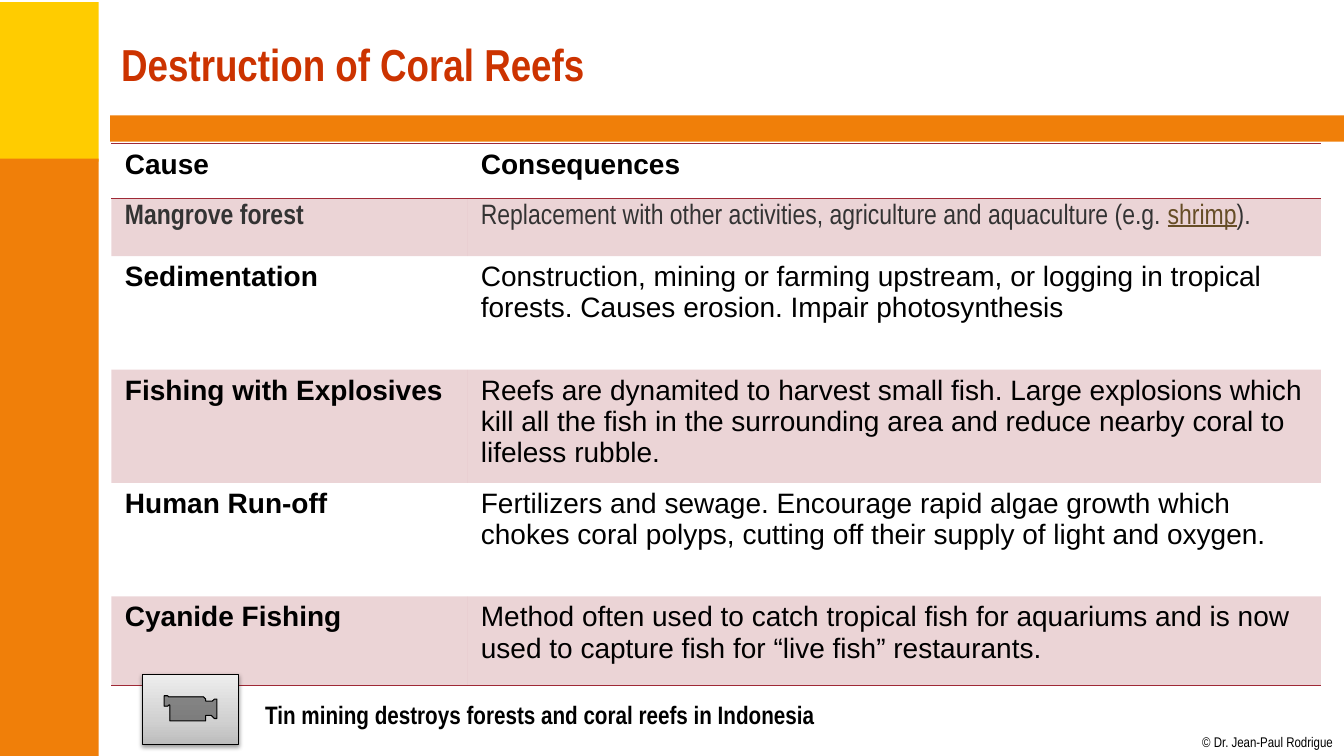
from copy import deepcopy
from dataclasses import dataclass

from lxml import etree
from pptx import Presentation
from pptx import util as u
from pptx.dml.color import RGBColor
from pptx.enum import shapes, text
from pptx.oxml import ns

PX = 9525
COLORS = {
    "yellow": "FFCC00", "orange": "F07F09", "title": "CC3300", "wine": "9F2936",
    "black": "000000", "gray": "333333", "brown": "664D26",
    "button_dark": "BDBDBD", "button_mid": "D1D1D1", "button_light": "EEEEEE",
}
COLUMNS = [339, 813]
ROW_HEIGHTS = [52, 55, 108, 108, 108, 85]
NO_GRID_STYLE = "{2D5ABB26-0587-4C30-8999-92F81FD0307C}"


@dataclass(frozen=True)
class Frame:
    left: int
    top: int
    width: int
    height: int

    def emu(self) -> list[u.Emu]:
        return [u.Emu(n * PX) for n in (self.left, self.top, self.width, self.height)]


@dataclass(frozen=True)
class Span:
    words: str
    size: int = 20
    font: str = "Arial"
    color: str = "black"
    bold: bool = False
    underline: bool = False


@dataclass(frozen=True)
class Bar:
    frame: Frame
    color: str


@dataclass(frozen=True)
class Label:
    frame: Frame
    span: Span
    wrap: bool = True
    padded: bool = True
    anchor: text.MSO_ANCHOR = text.MSO_ANCHOR.TOP


@dataclass(frozen=True)
class Row:
    cause: Span
    consequences: list[Span]


def plain_row(cause: str, consequences: str, bold: bool = False) -> Row:
    return Row(Span(cause, bold=True), [Span(consequences, bold=bold)])


NARROW = "Arial Narrow"
BARS = [
    Bar(Frame(-2, 2, 96, 152), "yellow"),
    Bar(Frame(-2, 151, 96, 569), "orange"),
    Bar(Frame(105, 110, 1175, 25), "orange"),
]
LABELS = [
    Label(Frame(1145, 699, 126, 16), Span("© Dr. Jean-Paul Rodrigue", 10, NARROW),
          wrap=False, padded=False),
    Label(Frame(106, 11, 1152, 100),
          Span("Destruction of Coral Reefs", 32, NARROW, "title", True),
          anchor=text.MSO_ANCHOR.MIDDLE),
    Label(Frame(243, 661, 640, 38),
          Span("Tin mining destroys forests and coral reefs in Indonesia", 18, NARROW, bold=True)),
]
ROWS = [
    plain_row("Cause", "Consequences", bold=True),
    Row(Span("Mangrove forest", font=NARROW, color="gray", bold=True), [
        Span("Replacement with other activities, agriculture and aquaculture (e.g. ",
             font=NARROW, color="gray"),
        Span("shrimp", font=NARROW, color="brown", underline=True),
        Span(").", font=NARROW, color="gray"),
    ]),
    plain_row("Sedimentation",
              "Construction, mining or farming upstream, or logging in tropical forests. "
              "Causes erosion. Impair photosynthesis"),
    plain_row("Fishing with Explosives",
              "Reefs are dynamited to harvest small fish. Large explosions which kill all the "
              "fish in the surrounding area and reduce nearby coral to lifeless rubble."),
    plain_row("Human Run-off",
              "Fertilizers and sewage. Encourage rapid algae growth which chokes coral polyps, "
              "cutting off their supply of light and oxygen."),
    plain_row("Cyanide Fishing",
              "Method often used to catch tropical fish for aquariums and is now used to "
              "capture fish for “live fish” restaurants."),
]


def rgb(name: str) -> RGBColor:
    return RGBColor.from_string(COLORS[name])


def add_node(parent, tag: str, **attributes: str):
    return etree.SubElement(parent, ns.qn(tag), attributes)


def add_span(para, span: Span) -> None:
    run = para.add_run()
    run.text = span.words
    font = run.font
    font.size = u.Pt(span.size)
    font.name = span.font
    font.bold = span.bold
    font.underline = span.underline
    font.color.rgb = rgb(span.color)


def add_bar(page, bar: Bar) -> None:
    shape = page.shapes.add_shape(shapes.MSO_SHAPE.RECTANGLE, *bar.frame.emu())
    shape.shadow.inherit = False
    shape.fill.solid()
    shape.fill.fore_color.rgb = rgb(bar.color)
    shape.line.fill.background()


def add_label(page, label: Label) -> None:
    box = page.shapes.add_textbox(*label.frame.emu()).text_frame
    box.word_wrap = label.wrap
    box.vertical_anchor = label.anchor
    if not label.padded:
        box.margin_left = box.margin_top = box.margin_right = box.margin_bottom = 0
    add_span(box.paragraphs[0], label.span)


def add_border(cell, tag: str) -> None:
    line = add_node(cell._tc.get_or_add_tcPr(), tag, w=str(u.Pt(1)))
    add_node(add_node(line, "a:solidFill"), "a:srgbClr", val=COLORS["wine"])


def fill_cell(cell, spans: list[Span], index: int) -> None:
    cell.margin_left = cell.margin_right = u.Emu(13 * PX)
    cell.margin_top = cell.margin_bottom = u.Emu(5 * PX)
    if index == 0:
        add_border(cell, "a:lnT")
    if index in (0, len(ROWS) - 1):
        add_border(cell, "a:lnB")
    if index % 2:
        cell.fill.solid()
        cell.fill.fore_color.rgb = rgb("wine")
        tint = cell._tc.tcPr.find(ns.qn("a:solidFill"))[0]
        add_node(tint, "a:alpha", val="20000")
    else:
        cell.fill.background()
    for span in spans:
        add_span(cell.text_frame.paragraphs[0], span)


def add_causes_table(page) -> None:
    frame = Frame(106, 137, sum(COLUMNS), sum(ROW_HEIGHTS))
    table = page.shapes.add_table(len(ROWS), len(COLUMNS), *frame.emu()).table
    table.first_row = table.horz_banding = False
    table._tbl.tblPr.find(ns.qn("a:tableStyleId")).text = NO_GRID_STYLE
    for column, width in zip(table.columns, COLUMNS):
        column.width = u.Emu(width * PX)
    for index, (row, height) in enumerate(zip(ROWS, ROW_HEIGHTS)):
        table.rows[index].height = u.Emu(height * PX)
        fill_cell(table.cell(index, 0), [row.cause], index)
        fill_cell(table.cell(index, 1), row.consequences, index)


def add_movie_button(page, frame: Frame) -> None:
    button = page.shapes.add_shape(shapes.MSO_SHAPE.ACTION_BUTTON_MOVIE, *frame.emu())
    button.fill.gradient()
    button.fill.gradient_angle = 90
    properties = button._element.spPr
    stop_list = properties.find(ns.qn("a:gradFill")).find(ns.qn("a:gsLst"))
    stop_list.insert(1, deepcopy(stop_list[0]))
    shades = [("button_dark", 0), ("button_mid", 0.35), ("button_light", 1)]
    for stop, (color, position) in zip(button.fill.gradient_stops, shades):
        stop.color.rgb = rgb(color)
        stop.position = position
    button.line.color.rgb = rgb("black")
    button.line.width = u.Pt(0.75)
    button.shadow.inherit = False
    shadow = add_node(properties.find(ns.qn("a:effectLst")), "a:outerShdw",
                      blurRad="40000", dist="20000", dir="5400000", rotWithShape="0")
    shade = add_node(shadow, "a:srgbClr", val=COLORS["black"])
    add_node(shade, "a:alpha", val="38000")


def main() -> None:
    deck = Presentation()
    deck.slide_width, deck.slide_height = u.Emu(1280 * PX), u.Emu(720 * PX)
    page = deck.slides.add_slide(deck.slide_layouts[6])
    for bar in BARS:
        add_bar(page, bar)
    copyright_line, title, caption = LABELS
    add_label(page, copyright_line)
    add_label(page, title)
    add_causes_table(page)
    add_movie_button(page, Frame(136, 642, 91, 67))
    add_label(page, caption)
    deck.save("out.pptx")


if __name__ == "__main__":
    main()
